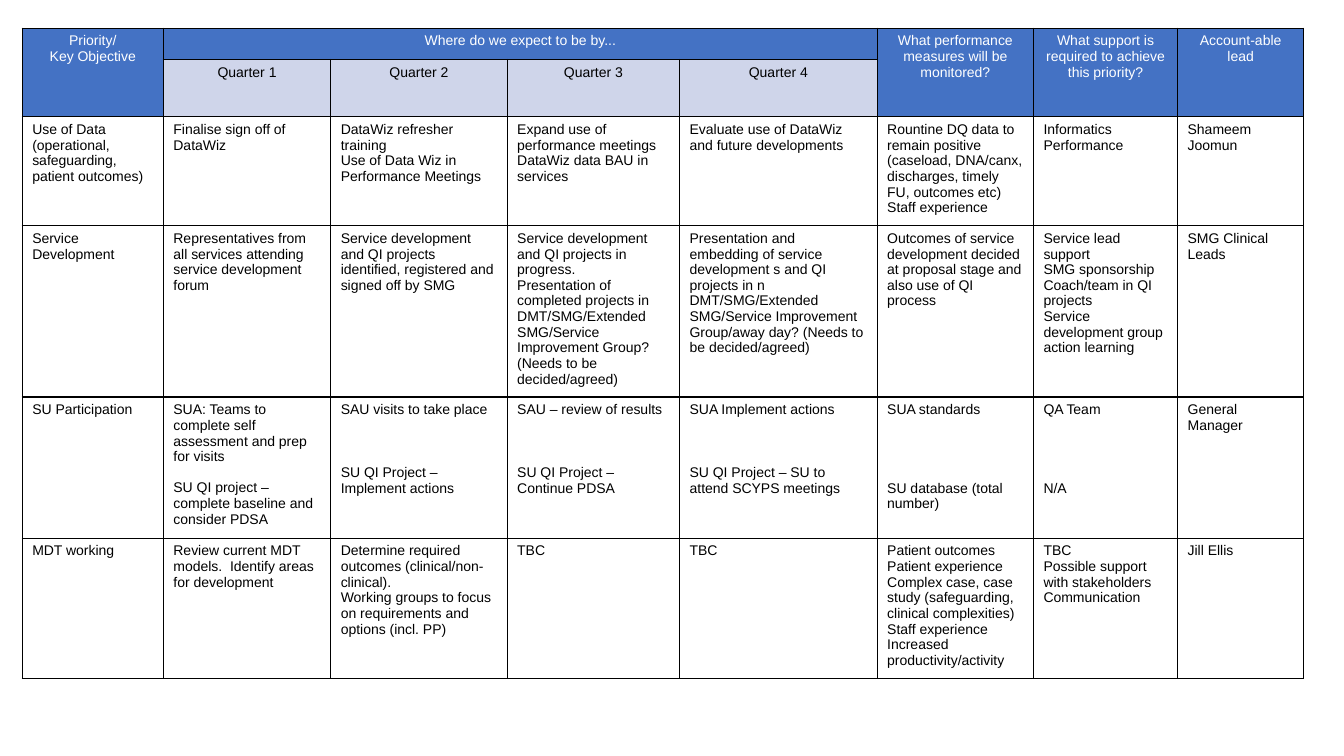
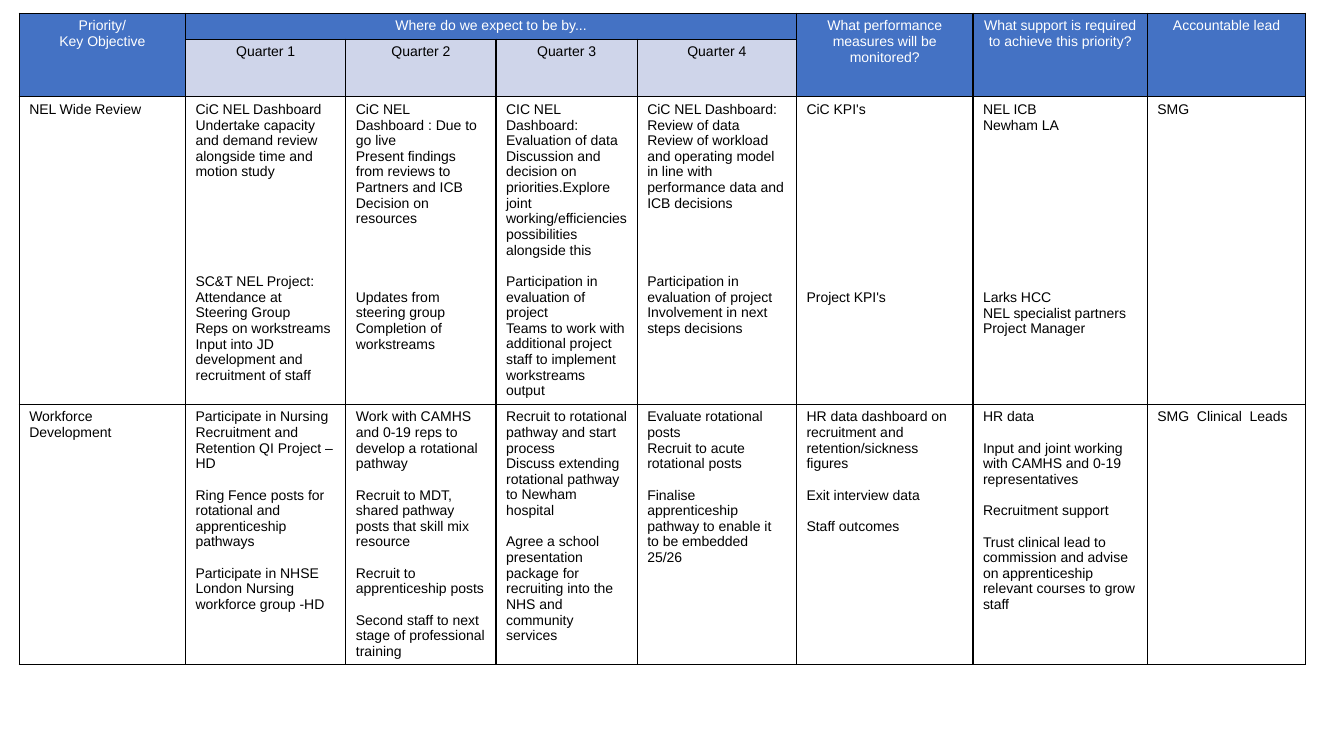
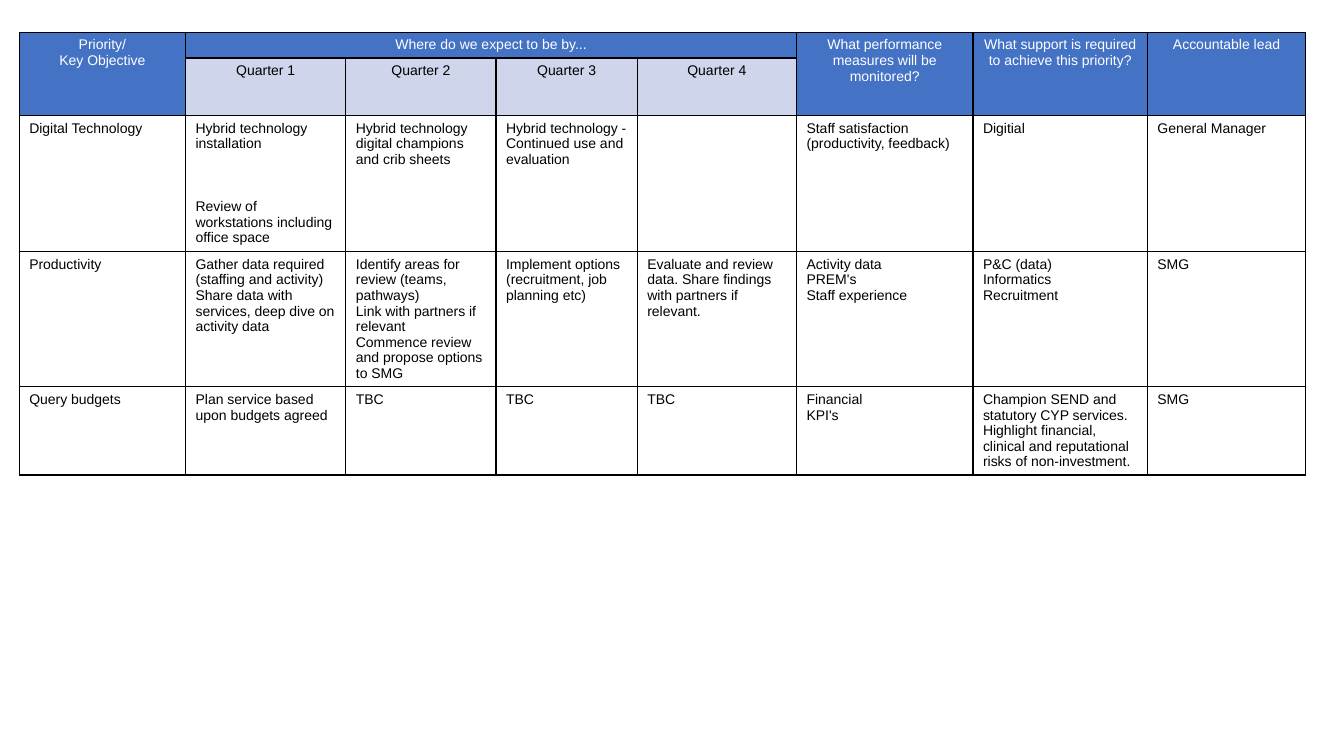
from lxml.etree import SubElement
from pptx import Presentation
from pptx.dml.color import RGBColor
from pptx.enum.text import PP_ALIGN
from pptx.oxml.ns import qn
from pptx.util import Emu, Pt

PX = 9144
FONT = "Arial"
FONT_SIZE = Pt(10)
LINE_HEIGHT = 11.2
BLUE = RGBColor(0x44, 0x72, 0xC4)
PALE_BLUE = RGBColor(0xCF, 0xD5, 0xEA)
WHITE = RGBColor(0xFF, 0xFF, 0xFF)
BLACK = RGBColor(0, 0, 0)

QUARTERS = [f"Quarter {n}" for n in range(1, 5)]
NARROW_COLS = [140, 166, 175, 171, 196, 155, 143, 125]
WIDE_COLS = [165, 159, 149, 140, 158, 175, 173, 157]

DATA_AND_SERVICES = [
    [
        "Use of Data (operational, safeguarding, patient outcomes)",
        "Finalise sign off of DataWiz",
        ("DataWiz refresher training", "Use of Data Wiz in Performance Meetings"),
        ("Expand use of performance meetings", "DataWiz data BAU in services"),
        "Evaluate use of DataWiz and future developments",
        ("Rountine DQ data to remain positive (caseload, DNA/canx, discharges, "
         "timely FU, outcomes etc)", "Staff experience"),
        ("Informatics", "Performance"),
        "Shameem Joomun",
    ],
    [
        ("Service", "Development"),
        "Representatives from all services attending service development forum",
        "Service development and QI projects identified, registered and signed off by SMG",
        ("Service development and QI projects in progress.",
         "Presentation of completed projects in DMT/SMG/Extended SMG/Service "
         "Improvement Group? (Needs to be decided/agreed)"),
        "Presentation and embedding of service development s and QI projects "
        "in n DMT/SMG/Extended SMG/Service Improvement Group/away day? "
        "(Needs to be decided/agreed)",
        "Outcomes of service development decided at proposal stage and also use of QI process",
        ("Service lead support", "SMG sponsorship", "Coach/team in QI projects",
         "Service development group action learning"),
        "SMG Clinical Leads",
    ],
    [
        "SU Participation",
        ("SUA: Teams to complete self assessment and prep for visits", 1,
         "SU QI project – complete baseline and consider PDSA"),
        ("SAU visits to take place", 3, "SU QI Project – Implement actions"),
        ("SAU – review of results", 3, "SU QI Project –Continue PDSA"),
        ("SUA Implement actions", 3, "SU QI Project – SU to attend SCYPS meetings"),
        ("SUA standards", 4, "SU database (total number)"),
        ("QA Team", 4, "N/A"),
        "General Manager",
    ],
    [
        "MDT working",
        "Review current MDT models.  Identify areas for development",
        ("Determine required outcomes (clinical/non-clinical).",
         "Working groups to focus on requirements and options (incl. PP)"),
        "TBC",
        "TBC",
        ("Patient outcomes", "Patient experience",
         "Complex case, case study (safeguarding, clinical complexities)",
         "Staff experience", "Increased productivity/activity"),
        ("TBC", "Possible support with stakeholders", "Communication"),
        "Jill Ellis",
    ],
]

REVIEW_AND_WORKFORCE = [
    [
        "NEL Wide Review",
        ("CiC NEL Dashboard",
         "Undertake capacity and demand review alongside time and motion study", 6,
         "SC&T NEL Project: Attendance at Steering Group", "Reps on workstreams",
         "Input into JD development and recruitment of staff"),
        ("CiC NEL Dashboard : Due to go live",
         "Present findings from reviews to Partners and ICB",
         "Decision on resources", 4, "Updates from steering group",
         "Completion of workstreams"),
        ("CIC NEL Dashboard: Evaluation of data",
         "Discussion and decision on priorities.Explore joint "
         "working/efficiencies possibilities alongside this", 1,
         "Participation in evaluation of project",
         "Teams to work with additional project staff to implement workstreams output"),
        ("CiC NEL Dashboard: Review of data",
         "Review of workload and operating model in line with performance data "
         "and ICB decisions", 4,
         "Participation in evaluation of project",
         "Involvement in next steps decisions"),
        ("CiC KPI's", 11, "Project KPI's"),
        ("NEL ICB", "Newham LA", 10, "Larks HCC", "NEL specialist partners",
         "Project Manager"),
        "SMG",
    ],
    [
        "Workforce  Development",
        ("Participate in Nursing Recruitment and Retention QI Project – HD", 1,
         "Ring Fence posts for rotational and apprenticeship pathways", 1,
         "Participate in NHSE London Nursing workforce group -HD"),
        ("Work with CAMHS and 0-19 reps to develop a rotational pathway", 1,
         "Recruit to MDT, shared pathway posts that skill mix resource", 1,
         "Recruit to apprenticeship posts", 1,
         "Second staff to next stage of professional training"),
        ("Recruit to rotational pathway and start process",
         "Discuss extending rotational pathway to Newham hospital", 1,
         "Agree a school presentation package for recruiting into the NHS and "
         "community services"),
        ("Evaluate rotational posts", "Recruit to acute rotational posts", 1,
         "Finalise apprenticeship pathway to enable it to be embedded 25/26"),
        ("HR data dashboard on recruitment and retention/sickness figures", 1,
         "Exit interview data", 1, "Staff outcomes"),
        ("HR data", 1, "Input and joint working with CAMHS and 0-19 representatives", 1,
         "Recruitment support", 1,
         "Trust clinical lead to commission and advise on apprenticeship relevant "
         "courses to grow staff"),
        "SMG  Clinical  Leads",
    ],
]

TECHNOLOGY_AND_BUDGETS = [
    [
        "Digital Technology",
        ("Hybrid technology installation", 3,
         "Review of workstations including office space"),
        "Hybrid technology digital champions and crib sheets",
        "Hybrid technology - Continued use and evaluation",
        "",
        "Staff satisfaction (productivity, feedback)",
        "Digitial",
        "General Manager",
    ],
    [
        "Productivity",
        ("Gather data required (staffing and activity)",
         "Share data with services, deep dive on activity data"),
        ("Identify areas for review (teams, pathways)",
         "Link with partners if relevant",
         "Commence review and propose options to SMG"),
        "Implement options (recruitment, job planning etc)",
        "Evaluate and review data. Share findings with partners if relevant.",
        ("Activity data", "PREM's", "Staff experience"),
        ("P&C (data)", "Informatics", "Recruitment"),
        "SMG",
    ],
    [
        "Query budgets",
        "Plan service based upon budgets agreed",
        "TBC",
        "TBC",
        "TBC",
        ("Financial", "KPI's"),
        "Champion SEND and statutory CYP services.  Highlight financial, clinical "
        "and reputational risks of non-investment.",
        "SMG",
    ],
]


def px(n):
    return Emu(n * PX)


def set_borders(cell):
    tcPr = cell._tc.get_or_add_tcPr()
    for side in ("lnL", "lnR", "lnT", "lnB"):
        ln = SubElement(tcPr, qn(f"a:{side}"), w=str(Pt(1)))
        fill = SubElement(ln, qn("a:solidFill"))
        SubElement(fill, qn("a:srgbClr"), val=str(BLACK))


def set_text(cell, content, color, align):
    parts = (content,) if isinstance(content, str) else content
    tf = cell.text_frame
    tf.text = "\n".join(part for part in parts if isinstance(part, str))
    paragraphs = iter(tf.paragraphs)
    gap_lines = 0
    for part in parts:
        if isinstance(part, int):
            gap_lines = part
            continue
        p = next(paragraphs)
        p.alignment = align
        if gap_lines:
            p.space_before = Pt(round(gap_lines * LINE_HEIGHT, 1))
            gap_lines = 0
        for r in p.runs:
            r.font.name = FONT
            r.font.size = FONT_SIZE
            r.font.color.rgb = color


def style_cell(cell, content, fill=WHITE, color=BLACK, align=PP_ALIGN.LEFT):
    set_borders(cell)
    cell.fill.solid()
    cell.fill.fore_color.rgb = fill
    set_text(cell, content, color, align)


def add_header(table, lead_label):
    labels = [("Priority/", "Key Objective"), "Where do we expect to be by...", "", "", "",
              "What performance measures will be monitored?",
              "What support is required to achieve this priority?", lead_label]
    for col, label in enumerate(labels):
        style_cell(table.cell(0, col), label, BLUE, WHITE, PP_ALIGN.CENTER)
        if 1 <= col <= 4:
            style_cell(table.cell(1, col), QUARTERS[col - 1], PALE_BLUE, BLACK, PP_ALIGN.CENTER)
        else:
            style_cell(table.cell(1, col), "", BLUE)
            table.cell(0, col).merge(table.cell(1, col))
    table.cell(0, 1).merge(table.cell(0, 4))


def add_plan_slide(prs, left, top, cols, heights, lead_label, priorities):
    slide = prs.slides.add_slide(prs.slide_layouts[6])
    frame = slide.shapes.add_table(len(heights), len(cols), px(left), px(top),
                                   px(sum(cols)), px(sum(heights)))
    table = frame.table
    for column, width in zip(table.columns, cols):
        column.width = px(width)
    for row, height in zip(table.rows, heights):
        row.height = px(height)
    add_header(table, lead_label)
    for row, priority in enumerate(priorities, start=2):
        for col, content in enumerate(priority):
            style_cell(table.cell(row, col), content)


def main():
    prs = Presentation()
    prs.slide_width = px(1333)
    prs.slide_height = px(750)
    add_plan_slide(prs, 22, 28, NARROW_COLS, [31, 57, 108, 170, 140, 139],
                   "Account-able lead", DATA_AND_SERVICES)
    add_plan_slide(prs, 19, 13, WIDE_COLS, [26, 57, 305, 258],
                   "Accountable lead", REVIEW_AND_WORKFORCE)
    add_plan_slide(prs, 19, 32, WIDE_COLS, [25, 57, 135, 134, 87],
                   "Accountable lead", TECHNOLOGY_AND_BUDGETS)
    prs.save("out.pptx")


if __name__ == "__main__":
    main()
